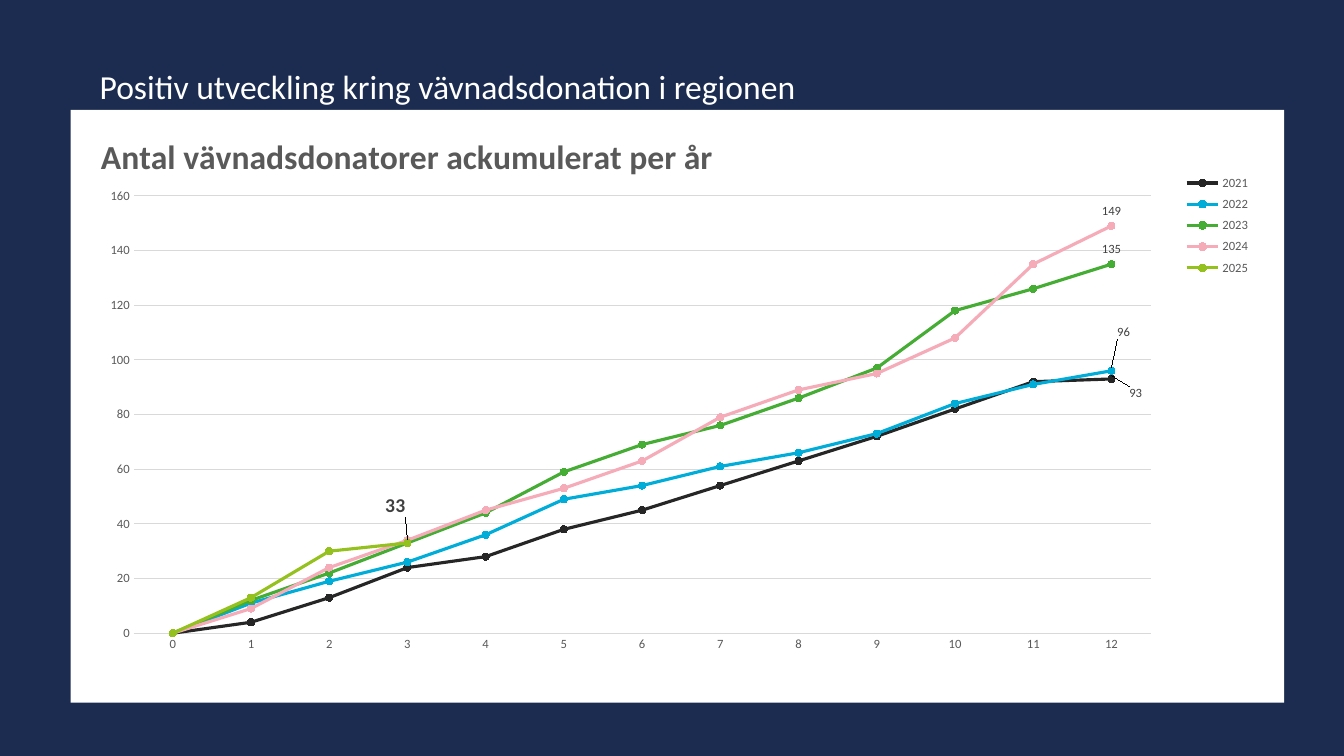
from pptx import Presentation
from pptx.chart.data import CategoryChartData
from pptx.dml.color import RGBColor
from pptx.enum import chart as ch, text
from pptx.oxml import parse_xml
from pptx.oxml.ns import nsdecls, qn
from pptx.util import Pt

FONT = "Calibri"
HEADING = "Positiv utveckling kring vävnadsdonation i regionen"
CHART_TITLE = "Antal vävnadsdonatorer ackumulerat per år"
MONTHS = [str(month) for month in range(13)]
YEARS = {
    "2021": ("262626", [0, 4, 13, 24, 28, 38, 45, 54, 63, 72, 82, 92, 93]),
    "2022": ("00ADD8", [0, 11, 19, 26, 36, 49, 54, 61, 66, 73, 84, 91, 96]),
    "2023": ("45AC34", [0, 12, 22, 33, 44, 59, 69, 76, 86, 97, 118, 126, 135]),
    "2024": ("F5ACB8", [0, 9, 24, 34, 45, 53, 63, 79, 89, 95, 108, 135, 149]),
    "2025": ("95C11F", [0, 13, 30, 33] + [None] * 9),
}
# Year: shift of its end label, as fractions of the chart, and leader line
LABEL_SHIFTS = {
    "2021": (0.02, 0.05, True),
    "2022": (0.01, -0.04, True),
    "2025": (-0.01, -0.03, False),
}
LARGE_LABEL_YEAR = "2025"


def rgb(value):
    return RGBColor.from_string(value)


def style(font, size, color, bold=False):
    font.name, font.size, font.bold = FONT, Pt(size), bold
    font.color.rgb = rgb(color)


def place(element, index, **layout):
    """Give a chart part a manual layout, inserted at the child index."""
    for old in element.findall(qn("c:layout")):
        element.remove(old)
    items = "".join(f'<c:{key} val="{value}"/>' for key, value in layout.items())
    element.insert(index, parse_xml(
        f'<c:layout {nsdecls("c")}><c:manualLayout>{items}</c:manualLayout></c:layout>'))


def set_leader_lines(labels, shown):
    for old in labels.findall(qn("c:showLeaderLines")):
        labels.remove(old)
    labels.append(parse_xml(
        f'<c:extLst {nsdecls("c")}><c:ext uri="{{CE6537A1-D6FC-4f65-9D91-7224C49458BB}}" '
        'xmlns:c15="http://schemas.microsoft.com/office/drawing/2012/chart">'
        f'<c15:showLeaderLines val="{int(shown)}"/></c:ext></c:extLst>'))


def label_end(series, year, values):
    """Label only the last known value of the year."""
    last = sum(value is not None for value in values) - 1
    large = year == LARGE_LABEL_YEAR
    series.data_labels.show_value = False
    label = series.points[last].data_label
    style(label.font, 14 if large else 9, "404040", large)
    label.position = ch.XL_LABEL_POSITION.ABOVE
    dx, dy, leader = LABEL_SHIFTS.get(year, (0, 0, False))
    labels = series.data_labels._element
    if dx or dy:
        place(labels.find(qn("c:dLbl")), 1, x=dx, y=dy)
    set_leader_lines(labels, leader)


def style_axes(chart):
    for axis in (chart.category_axis, chart.value_axis):
        axis.major_tick_mark = axis.minor_tick_mark = ch.XL_TICK_MARK.NONE
        style(axis.tick_labels.font, 9, "595959")
    grid = chart.value_axis.major_gridlines.format.line
    for line in (chart.category_axis.format.line, grid):
        line.color.rgb, line.width = rgb("D9D9D9"), Pt(0.75)
    chart.value_axis.format.line.fill.background()
    chart.value_axis.minimum_scale, chart.value_axis.maximum_scale = 0, 160
    chart.value_axis.major_unit = 20


def add_year_chart(slide):
    data = CategoryChartData()
    data.categories = MONTHS
    for year, (_, values) in YEARS.items():
        data.add_series(year, values)
    chart = slide.shapes.add_chart(
        ch.XL_CHART_TYPE.LINE_MARKERS, Pt(50.4), Pt(78.5), Pt(866.9), Pt(423.4), data).chart
    style(chart.font, 10, "000000")
    chart._chartSpace.find(qn("c:chart")).addnext(parse_xml(
        f'<c:spPr {nsdecls("c", "a")}><a:solidFill><a:srgbClr val="FFFFFF"/></a:solidFill>'
        '<a:ln><a:noFill/></a:ln></c:spPr>'))

    title_run = chart.chart_title.text_frame.paragraphs[0].add_run()
    title_run.text = CHART_TITLE
    style(title_run.font, 24, "595959", True)
    place(chart.chart_title._element, 1, xMode="edge", yMode="edge", x=0.02, y=0.03)

    chart.has_legend = True
    chart.legend.position = ch.XL_LEGEND_POSITION.RIGHT
    chart.legend.include_in_layout = False
    style(chart.legend.font, 9, "595959")
    place(chart.legend._element, 1, xMode="edge", yMode="edge", x=0.91, y=0.1, w=0.07, h=0.19)
    place(chart._chartSpace.chart.plotArea, 0, layoutTarget="inner", xMode="edge",
          yMode="edge", x=0.052, y=0.145, w=0.838, h=0.738)

    style_axes(chart)
    chart.plots[0].vary_by_categories = False
    for series, (year, (color, values)) in zip(chart.plots[0].series, YEARS.items()):
        series.smooth = False
        series.format.line.color.rgb, series.format.line.width = rgb(color), Pt(2.25)
        marker = series.marker
        marker.style, marker.size = ch.XL_MARKER_STYLE.CIRCLE, 5
        marker.format.fill.solid()
        marker.format.fill.fore_color.rgb = rgb(color)
        marker.format.line.color.rgb = rgb(color)
        label_end(series, year, values)


def add_heading(slide):
    frame = slide.shapes.add_textbox(Pt(64.1), Pt(10.8), Pt(828), Pt(104.4)).text_frame
    frame.word_wrap = True
    frame.vertical_anchor = text.MSO_ANCHOR.MIDDLE
    paragraph = frame.paragraphs[0]
    paragraph.line_spacing = 0.9
    run = paragraph.add_run()
    run.text = HEADING
    style(run.font, 24, "FFFFFF")


def main():
    deck = Presentation()
    deck.slide_width, deck.slide_height = Pt(960), Pt(540)
    slide = deck.slides.add_slide(deck.slide_layouts[6])
    slide.background.fill.solid()
    slide.background.fill.fore_color.rgb = rgb("1C2C50")
    add_heading(slide)
    add_year_chart(slide)
    deck.save("out.pptx")


if __name__ == "__main__":
    main()
